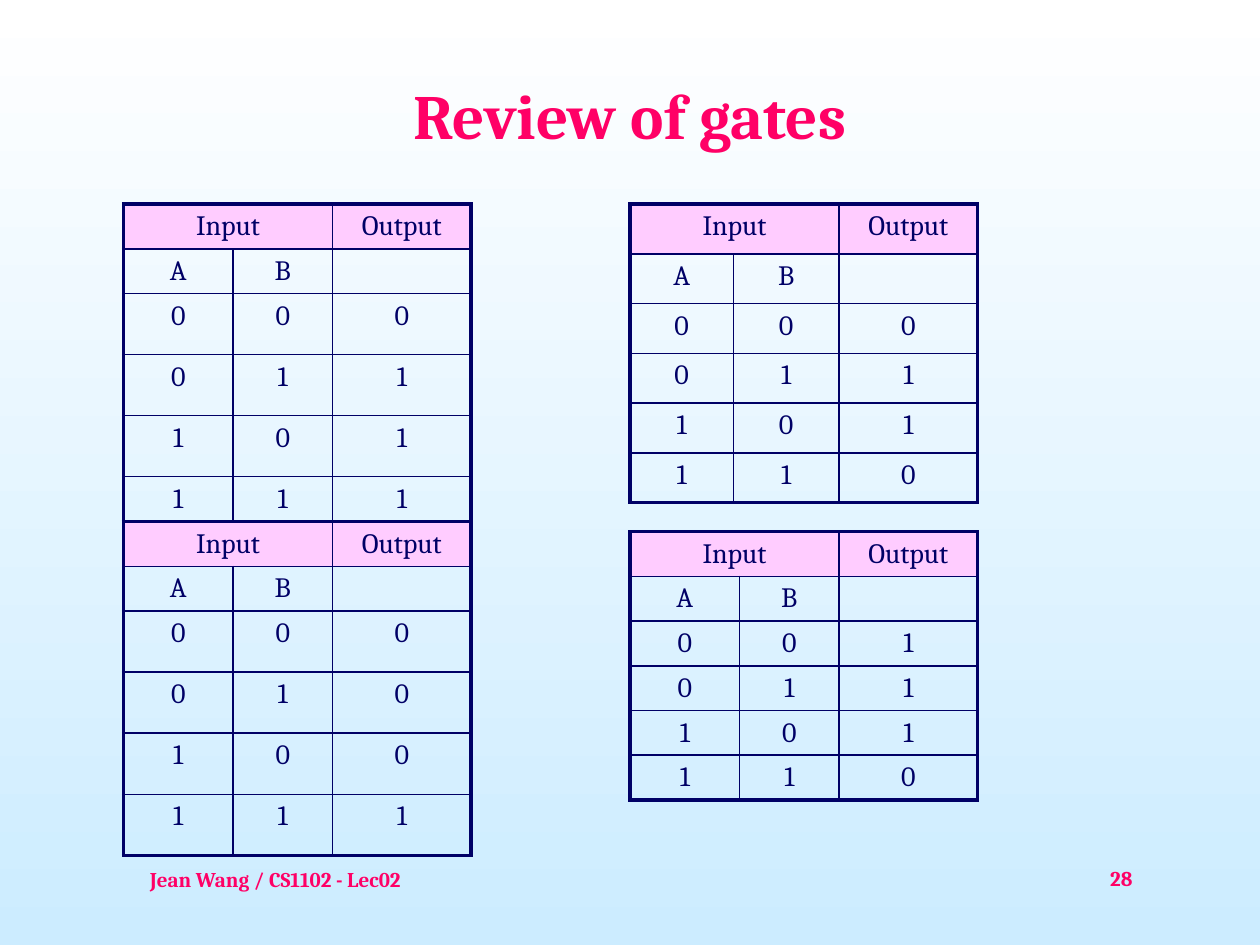
"""Builds a slide that reviews four logic gates by their truth tables."""
from lxml import etree
from pptx import Presentation
from pptx import util as u
from pptx.dml.color import RGBColor
from pptx.enum import text
from pptx.oxml.ns import qn

NAVY, PINK, ROSE = "000066", "FFCCFF", "FF0066"
MID, LEFT = text.PP_ALIGN.CENTER, text.PP_ALIGN.LEFT


def color(code):
    return RGBColor.from_string(code)


def write(frame, words, size, code, bold=False, align=MID):
    para = frame.paragraphs[0]
    para.alignment = align
    run = para.add_run()
    run.text = words
    run.font.name = "Cambria"
    run.font.size = u.Pt(size)
    run.font.bold = bold
    run.font.color.rgb = color(code)


deck = Presentation()
deck.slide_width, deck.slide_height = u.Inches(10), u.Inches(7.5)
slide = deck.slides.add_slide(deck.slide_layouts[6])

fill = slide.background.fill
fill.gradient()
fill.gradient_angle = 270
for stop, code in zip(fill.gradient_stops, ("FFFFFF", "CCECFF")):
    stop.color.rgb = color(code)

labels = [
    ("Jean Wang / CS1102 - Lec02", (1.09, 6.83, 2.89, 0.5), 12, LEFT, text.MSO_ANCHOR.TOP),
    ("28", (7.86, 6.82, 2.08, 0.5), 12, MID, text.MSO_ANCHOR.TOP),
    ("Review of gates", (0.75, 0.28, 8.5, 1.25), 36, MID, text.MSO_ANCHOR.MIDDLE),
]
for words, place, size, align, anchor in labels:
    frame = slide.shapes.add_textbox(*map(u.Inches, place)).text_frame
    frame.word_wrap = True
    frame.vertical_anchor = anchor
    write(frame, words, size, ROSE, True, align)

low, tall, even = 0.355, 0.485, 0.395
gates = [
    (0.98, 1.62, (0.87, 0.79, 1.1, 3.07), (low, low, tall, tall, tall, low), "0111"),
    (0.98, 4.14, (0.87, 0.79, 1.1, 2.05), (low, low, tall, tall, tall, tall), "0001"),
    (5, 1.62, (0.82, 0.84, 1.1), (even,) * 6, "0110"),
    (5, 4.22, (0.87, 0.79, 1.1), (low,) * 6, "1110"),
]
pairs = ("00", "01", "10", "11")
for left, top, wide, high, outs in gates:
    rows = [("Input", "", "Output", ""), ("A", "B", "", "")]
    rows += [(*pair, out, "") for pair, out in zip(pairs, outs)]
    area = map(u.Inches, (left, top, sum(wide), sum(high)))
    table = slide.shapes.add_table(len(rows), len(wide), *area).table
    table.first_row = table.horz_banding = False
    for col, width in zip(table.columns, wide):
        col.width = u.Inches(width)
    for row, height in zip(table.rows, high):
        row.height = u.Inches(height)
    for r, row in enumerate(rows):
        for c, words in enumerate(row[:len(wide)]):
            cell = table.cell(r, c)
            cell.margin_bottom = u.Inches(0.03)
            props = cell._tc.get_or_add_tcPr()
            edges = {"L": c in (0, 3), "R": c == 2, "T": r == 0, "B": r == 5}
            for side, outer in edges.items():
                width = u.Pt(2.25 if outer else 1)
                line = etree.SubElement(props, qn("a:ln" + side), w=str(int(width)))
                if c < 3 or side == "L":
                    solid = etree.SubElement(line, qn("a:solidFill"))
                    etree.SubElement(solid, qn("a:srgbClr"), val=NAVY)
                else:
                    etree.SubElement(line, qn("a:noFill"))
            if r == 0 and c < 3:
                cell.fill.solid()
                cell.fill.fore_color.rgb = color(PINK)
            else:
                cell.fill.background()
            if words:
                write(cell.text_frame, words, 16, NAVY)
            else:
                para = cell.text_frame.paragraphs[0]
                etree.SubElement(para._p, qn("a:endParaRPr"), sz="1600")
    table.cell(0, 0).merge(table.cell(0, 1))

deck.save("out.pptx")
